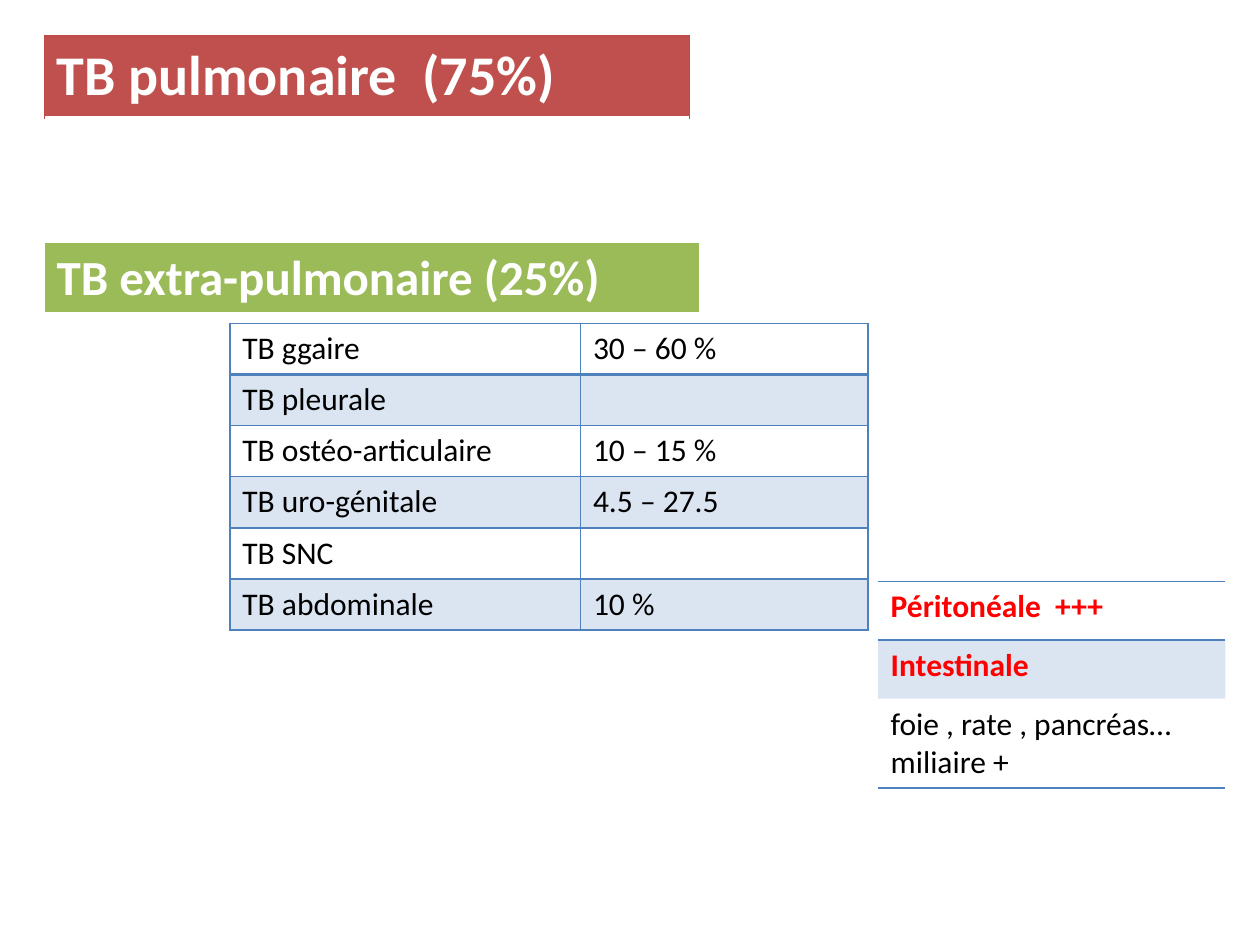
import lxml.etree
import pptx
import pptx.dml.color
import pptx.oxml.ns
import pptx.util

Pt = pptx.util.Pt
RGBColor = pptx.dml.color.RGBColor
qn = pptx.oxml.ns.qn

BLUE = RGBColor(0x4F, 0x81, 0xBD)
RED = RGBColor(0xC0, 0x50, 0x4D)
RED_EDGE = RGBColor(0xBF, 0x4C, 0x48)
GREEN = RGBColor(0x9B, 0xBB, 0x59)
ALERT = RGBColor(0xFF, 0, 0)
WHITE = RGBColor(0xFF, 0xFF, 0xFF)
BLACK = RGBColor(0, 0, 0)

FONT = "Calibri"
BODY_SIZE = 18
SITES = [
    ("TB ggaire", "30 – 60 %"),
    ("TB pleurale", ""),
    ("TB ostéo-articulaire", "10 – 15 %"),
    ("TB uro-génitale", "4.5 – 27.5"),
    ("TB SNC", ""),
    ("TB abdominale", "10 %"),
]
ABDOMINAL_FORMS = [
    ("Péritonéale  +++", ALERT, True, "TB"),
    ("Intestinale", ALERT, True, "T"),
    ("foie , rate , pancréas… miliaire +", BLACK, False, "B"),
]


def add_grid(slide, left, top, widths, heights):
    """Add an unbanded table with the given column widths and row heights."""
    grid = slide.shapes.add_table(
        len(heights), len(widths), Pt(left), Pt(top), Pt(sum(widths)), Pt(sum(heights))
    ).table
    grid.first_row = grid.horz_banding = False
    for column, width in zip(grid.columns, widths):
        column.width = Pt(width)
    for row, height in zip(grid.rows, heights):
        row.height = Pt(height)
    return grid


def set_borders(cell, borders):
    """Draw the sides given as {side: (colour, width)} and hide the others."""
    properties = cell._tc.get_or_add_tcPr()
    for side in "LRTB":
        edge = lxml.etree.SubElement(properties, qn(f"a:ln{side}"))
        if side not in borders:
            lxml.etree.SubElement(edge, qn("a:noFill"))
            continue
        color, width = borders[side]
        edge.set("w", str(Pt(width)))
        paint = lxml.etree.SubElement(edge, qn("a:solidFill"))
        lxml.etree.SubElement(paint, qn("a:srgbClr"), val=str(color))


def set_fill(cell, color, opacity=100):
    """Fill a cell, or leave it clear when there is no colour."""
    if color is None:
        cell.fill.background()
        return
    cell.fill.solid()
    cell.fill.fore_color.rgb = color
    if opacity < 100:
        tint = cell._tc.tcPr.find(qn("a:solidFill")).find(qn("a:srgbClr"))
        lxml.etree.SubElement(tint, qn("a:alpha"), val=str(opacity * 1000))


def write(cell, text, size, color, bold=False):
    """Write one run of text in a cell."""
    if not text:
        return
    run = cell.text_frame.paragraphs[0].add_run()
    run.text = text
    run.font.name = FONT
    run.font.size = Pt(size)
    run.font.bold = bold
    run.font.color.rgb = color


def add_banner(slide, top, width, height, text, size, color, edge, bottom):
    """Add a one-cell heading with its own edge and bottom line."""
    cell = add_grid(slide, 25.2, top, [width], [height]).cell(0, 0)
    set_borders(cell, {**dict.fromkeys("LRT", edge), "B": bottom})
    set_fill(cell, color)
    write(cell, text, size, WHITE, True)


def add_sites(slide):
    """Add the table of extra-pulmonary sites and their frequencies."""
    grid = add_grid(slide, 131.3, 184.8, [200.4, 164.4], [29.2] * len(SITES))
    for row, site in enumerate(SITES):
        for column, text in enumerate(site):
            cell = grid.cell(row, column)
            borders = dict.fromkeys("LRTB", (BLUE, 1))
            if row == 0:
                borders["B"] = (BLUE, 2)
            elif row == 1:
                borders["T"] = (BLUE, 2)
            set_borders(cell, borders)
            set_fill(cell, BLUE if row % 2 else None, 20)
            write(cell, text, BODY_SIZE, BLACK)


def add_abdominal_forms(slide):
    """Add the list of abdominal forms beside the last site."""
    grid = add_grid(slide, 501.8, 332.3, [198.4], [33.5, 33.5, 51])
    for row, (text, color, bold, sides) in enumerate(ABDOMINAL_FORMS):
        cell = grid.cell(row, 0)
        set_borders(cell, dict.fromkeys(sides, (BLUE, 1)))
        set_fill(cell, BLUE if row % 2 else None, 20)
        write(cell, text, BODY_SIZE, color, bold)


def main():
    """Build the slide and save it."""
    deck = pptx.Presentation()
    deck.slide_width, deck.slide_height = Pt(720), Pt(540)
    slide = deck.slides.add_slide(deck.slide_layouts[6])
    add_sites(slide)
    add_abdominal_forms(slide)
    add_banner(slide, 20.6, 368.6, 45.4, "TB pulmonaire  (75%)", 32,
               RED, (RED_EDGE, 0.75), (WHITE, 2))
    add_banner(slide, 138.4, 374.4, 41, "TB extra-pulmonaire (25%)", 28,
               GREEN, (WHITE, 1), (WHITE, 3))
    deck.save("out.pptx")


if __name__ == "__main__":
    main()
